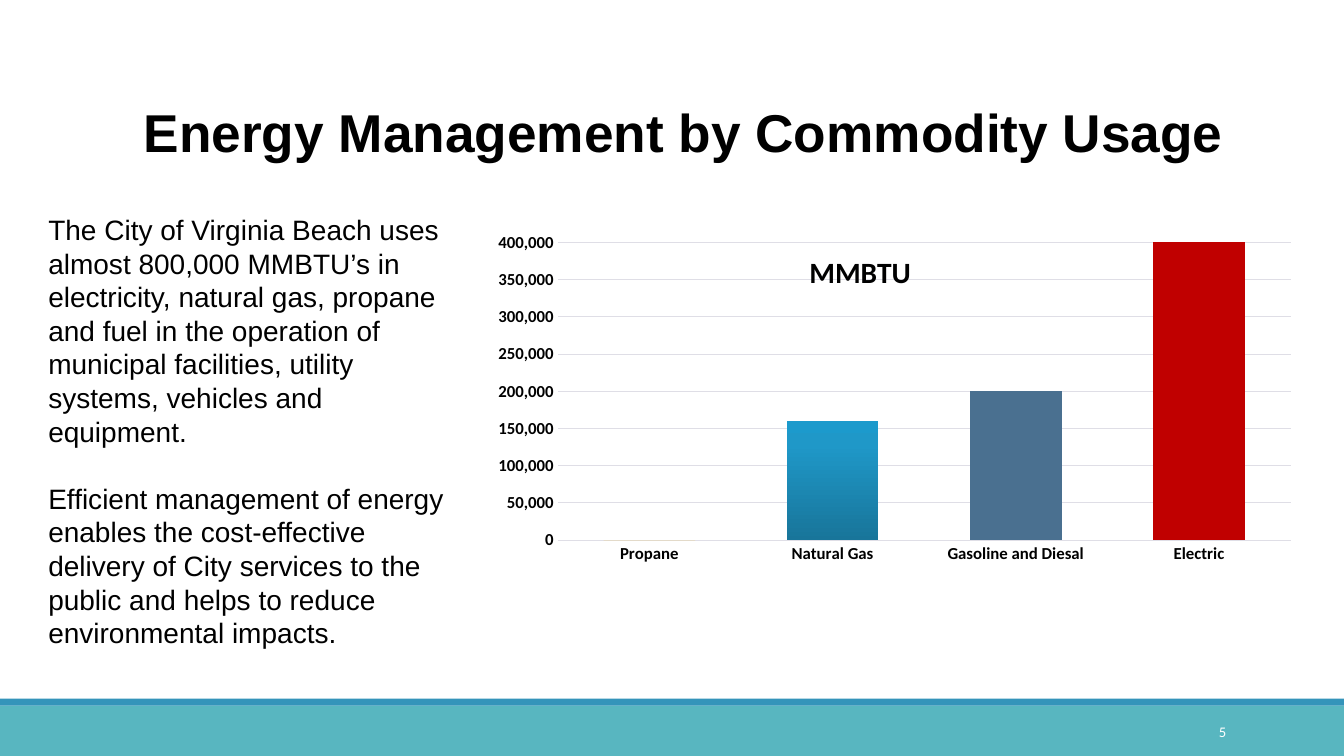
from lxml.etree import SubElement
from pptx import Presentation
from pptx.chart.data import CategoryChartData
from pptx.dml.color import RGBColor
from pptx.enum.chart import XL_CHART_TYPE, XL_TICK_MARK
from pptx.enum.shapes import MSO_SHAPE
from pptx.enum.text import MSO_ANCHOR, PP_ALIGN
from pptx.oxml import parse_xml
from pptx.oxml.ns import nsdecls, qn
from pptx.util import Pt

WIDE, HIGH = 960, 540
BODY = [
    "The City of Virginia Beach uses almost 800,000 MMBTU’s in electricity, "
    "natural gas, propane and fuel in the operation of municipal facilities, "
    "utility systems, vehicles and equipment.",
    "Efficient management of energy enables the cost-effective delivery of "
    "City services to the public and helps to reduce environmental impacts.",
]
USAGE = {"Propane": 0, "Natural Gas": 160000,
         "Gasoline and Diesal": 200000, "Electric": 440000}
POINTS = {0: "FFC000", 2: "4A7090", 3: "C00000"}
STOPS = [(0, "18759A"), (80, "1F98C8"), (100, "1C9ACC")]


def color(code):
    return RGBColor.from_string(code)


def paint(fill, code):
    fill.solid()
    fill.fore_color.rgb = color(code)


def style(font, size, code="000000", name="Arial", bold=False):
    font.size, font.name, font.bold = Pt(size), name, bold
    font.color.rgb = color(code)


def add_box(slide, box, anchor=MSO_ANCHOR.MIDDLE):
    frame = slide.shapes.add_textbox(*map(Pt, box)).text_frame
    frame.word_wrap = True
    frame.vertical_anchor = anchor
    return frame


def add_text(para, text, size, **look):
    run = para.add_run()
    run.text = text
    style(run.font, size, **look)


def add_band(slide, box, code):
    band = slide.shapes.add_shape(MSO_SHAPE.RECTANGLE, *map(Pt, box))
    band.shadow.inherit = False
    paint(band.fill, code)
    band.line.fill.background()


def add_footer(slide, box):
    left, top, width, height = box
    add_band(slide, (left, top + 5, width, height - 5), "58B6C0")
    add_band(slide, (left, top, width, 5), "3494BA")
    para = add_box(slide, (width - 180, top + 9.3, 103, 29)).paragraphs[0]
    para.alignment = PP_ALIGN.RIGHT
    add_text(para, "5", 10.5, code="FFFFFF", name="Calibri")


def add_title(slide, box):
    para = add_box(slide, box).paragraphs[0]
    add_text(para, "Energy Management by Commodity Usage", 38, bold=True)


def add_body(slide, box):
    frame = add_box(slide, box, MSO_ANCHOR.TOP)
    frame.margin_top = Pt(25)
    for num, text in enumerate(BODY):
        para = frame.add_paragraph() if num else frame.paragraphs[0]
        para.space_before = Pt(24 * num)
        add_text(para, text, 20)


def lay_out(parent, index, **parts):
    layout = parent.find(qn("c:layout"))
    if layout is None:
        layout = parse_xml(f"<c:layout {nsdecls('c')}/>")
        parent.insert(index, layout)
    manual = SubElement(layout, qn("c:manualLayout"))
    for tag, value in parts.items():
        SubElement(manual, qn("c:" + tag)).set("val", str(value))


def shade(series):
    series.format.fill.solid()
    props = series.format.fill._xPr
    stops = "".join(
        f'<a:gs pos="{pos * 1000}"><a:srgbClr val="{code}"/></a:gs>'
        for pos, code in STOPS)
    grad = parse_xml(f"<a:gradFill {nsdecls('a')}><a:gsLst>{stops}</a:gsLst>"
                     '<a:lin ang="16200000" scaled="0"/></a:gradFill>')
    props.replace(props.find(qn("a:solidFill")), grad)


def add_usage(slide, box):
    data = CategoryChartData()
    data.categories = list(USAGE)
    data.add_series("Series 1", list(USAGE.values()))
    chart = slide.shapes.add_chart(
        XL_CHART_TYPE.COLUMN_CLUSTERED, *map(Pt, box), data).chart
    style(chart.font, 10, name="Calibri")
    chart.has_legend = False
    chart.has_title = True
    title = chart.chart_title
    add_text(title.text_frame.paragraphs[0], "MMBTU", 21,
             name="Calibri", bold=True)
    lay_out(title._element, 1, xMode="edge", yMode="edge", x=0.435, y=0.033)
    lay_out(chart._chartSpace.chart.plotArea, 0, layoutTarget="inner",
            xMode="edge", yMode="edge", x=0.149, y=0.025, w=0.851, h=0.7)

    plot = chart.plots[0]
    plot.vary_by_categories = False
    plot.gap_width, plot.overlap = 100, -24
    series = plot.series[0]
    shade(series)
    for num, code in POINTS.items():
        paint(series.points[num].format.fill, code)

    cats, vals = chart.category_axis, chart.value_axis
    for axis in (cats, vals):
        style(axis.tick_labels.font, 12, name="Calibri", bold=True)
        axis.major_tick_mark = axis.minor_tick_mark = XL_TICK_MARK.NONE
    vals.minimum_scale, vals.maximum_scale = 0, 400000
    vals.major_unit = 50000
    vals.tick_labels.number_format = "#,##0"
    vals.tick_labels.number_format_is_linked = False
    vals.format.line.fill.background()
    for line in (cats.format.line, vals.major_gridlines.format.line):
        line.width = Pt(0.75)
        line.color.rgb = color("DFDEE6")


def main():
    deck = Presentation()
    deck.slide_width, deck.slide_height = Pt(WIDE), Pt(HIGH)
    slide = deck.slides.add_slide(deck.slide_layouts[6])
    add_footer(slide, (0, 499, WIDE, HIGH - 499))
    add_title(slide, (95.5, 52, 788, 84))
    add_body(slide, (27.4, 126.7, 313.9, 344.2))
    add_usage(slide, (306.7, 165.6, 615.6, 303.8))
    deck.save("out.pptx")


if __name__ == "__main__":
    main()
